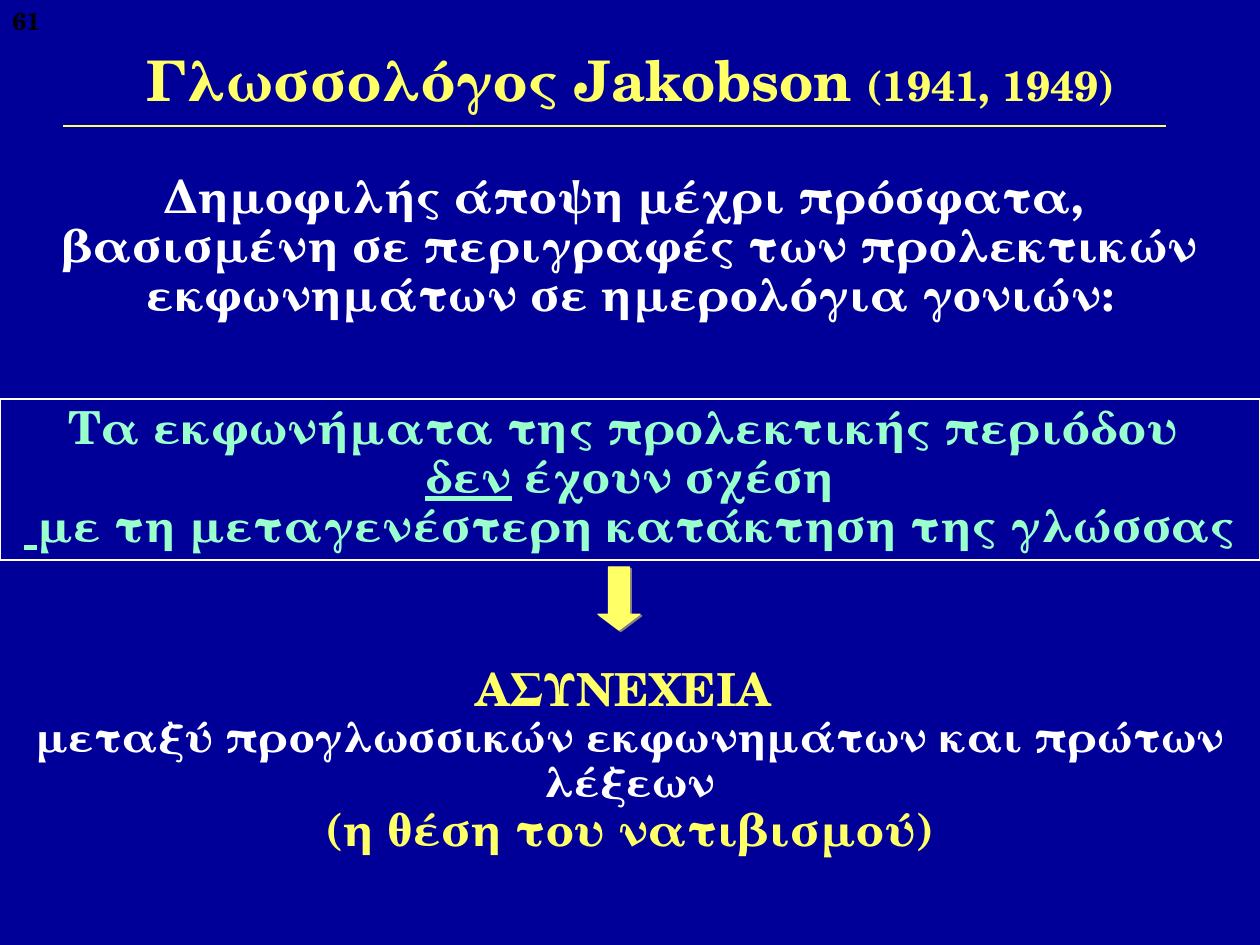
from lxml.etree import SubElement
from pptx import Presentation
from pptx.dml.color import RGBColor as RGB
from pptx.enum.shapes import MSO_CONNECTOR as CONN, MSO_SHAPE as SHAPE
from pptx.enum.text import MSO_ANCHOR as ANCHOR, PP_ALIGN as ALIGN
from pptx.oxml.ns import qn
from pptx.util import Pt

PX = 914400 / 126
W, H = 1260, 945
FONT = "TeX Gyre Schola"
COLORS = {
    "navy": "000099", "yellow": "FFFF66", "mint": "99FFCC",
    "white": "FFFFFF", "black": "000000", "gray": "808080",
}


def px(*values):
    return [round(v * PX) for v in values]


def color(name):
    return RGB.from_string(COLORS[name])


def write(tf, paragraphs, align=ALIGN.CENTER, spacing=0.9, anchor=ANCHOR.TOP):
    """Fill a frame; each paragraph is a list of (text, size, color, underline) runs."""
    tf.word_wrap = True
    tf.vertical_anchor = anchor
    for i, runs in enumerate(paragraphs):
        p = tf.paragraphs[0] if i == 0 else tf.add_paragraph()
        p.alignment, p.line_spacing = align, spacing
        for text, size, name, underline in runs:
            r = p.add_run()
            r.text = text
            formats = {"name": FONT, "size": Pt(size), "bold": True, "underline": underline}
            for key, value in formats.items():
                setattr(r.font, key, value)
            r.font.color.rgb = color(name)


def add_text(s, box, paragraphs, **options):
    write(s.shapes.add_textbox(*px(*box)).text_frame, paragraphs, **options)


def add_heading(s, x, y, w, h):
    add_text(s, (x, y, w, h), [[
        ("Γλωσσολόγος Jakobson", 32, "yellow", False),
        (" ", 28, "yellow", False),
        ("(1941, 1949)", 24, "yellow", False),
    ]], spacing=1, anchor=ANCHOR.MIDDLE)
    rule_y = y + h
    rule = s.shapes.add_connector(CONN.STRAIGHT, *px(x - 32, rule_y, x + w, rule_y))
    rule.line.color.rgb = color("yellow")
    rule.line.width = Pt(1.5)
    SubElement(rule._element.spPr, qn("a:effectLst"))


def add_claim(s, x, y, w, h):
    sp = s.shapes.add_shape(SHAPE.RECTANGLE, *px(x, y, w, h))
    sp.shadow.inherit = False
    sp.fill.background()
    sp.line.color.rgb = color("white")
    sp.line.width = Pt(0.75)
    write(sp.text_frame, [
        [("Τα εκφωνήματα της προλεκτικής περιόδου ", 26, "mint", False)],
        [("δεν", 26, "mint", True), (" έχουν σχέση", 26, "mint", False)],
        [(" ", 26, "mint", True),
         ("με τη μεταγενέστερη κατάκτηση της γλώσσας", 26, "mint", False)],
    ])


def add_arrow(s, x, y, w, h):
    sp = s.shapes.add_shape(SHAPE.DOWN_ARROW, *px(x, y, w, h))
    sp.adjustments[0], sp.adjustments[1] = 0.5, 0.375
    sp.fill.solid()
    sp.fill.fore_color.rgb = color("yellow")
    sp.line.color.rgb = color("yellow")
    sp.line.width = Pt(0.75)
    sp.shadow.inherit = False
    effects = sp._element.spPr.find(qn("a:effectLst"))
    shadow = SubElement(effects, qn("a:outerShdw"), blurRad="0", dist=str(Pt(1.4)),
                        dir=str(45 * 60000), algn="ctr", rotWithShape="0")
    SubElement(shadow, qn("a:srgbClr"), val=COLORS["gray"])


def main():
    prs = Presentation()
    prs.slide_width, prs.slide_height = px(W, H)
    s = prs.slides.add_slide(prs.slide_layouts[6])
    s.background.fill.solid()
    s.background.fill.fore_color.rgb = color("navy")

    add_text(s, (0, 0, 105, 63), [[("61", 14, "black", False)]],
             align=ALIGN.LEFT, spacing=1)
    add_heading(s, 95, 32, 1071, 94)
    add_claim(s, 0, 399, W, 161)
    add_text(s, (32, 168, 1197, 160), [
        [("Δημοφιλής άποψη μέχρι πρόσφατα, ", 26, "white", False)],
        [("βασισμένη σε περιγραφές των προλεκτικών εκφωνημάτων σε ημερολόγια γονιών:",
          26, "white", False)],
    ])
    add_text(s, (0, 661, W, 159), [
        [("ΑΣΥΝΕΧΕΙΑ ", 26, "yellow", False)],
        [("μεταξύ προγλωσσικών εκφωνημάτων και πρώτων λέξεων", 24, "white", False)],
        [("(η θέση του νατιβισμού)", 26, "yellow", False)],
    ])
    add_arrow(s, 598, 567, 42, 63)
    prs.save("out.pptx")


if __name__ == "__main__":
    main()
